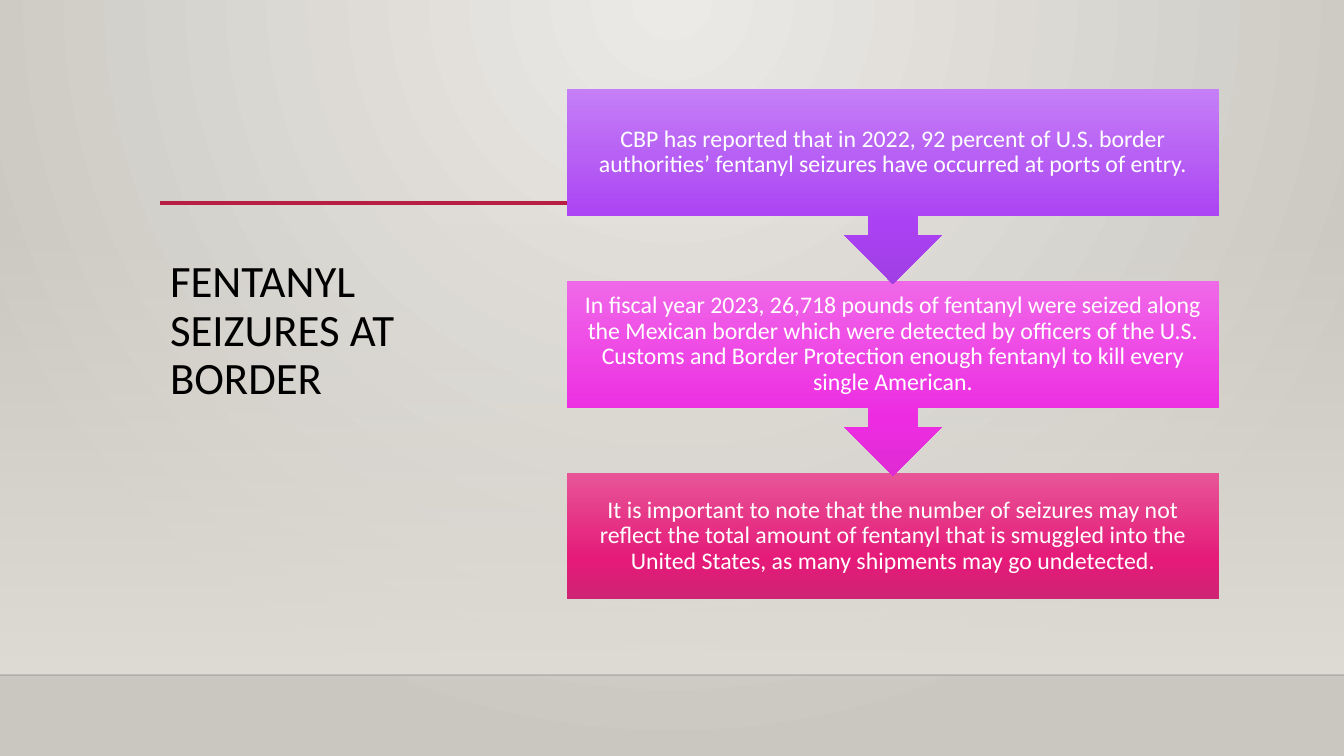
from lxml.etree import SubElement
from pptx import Presentation
from pptx.dml.color import RGBColor
from pptx.enum.shapes import MSO_CONNECTOR, MSO_SHAPE
from pptx.enum.text import MSO_ANCHOR, PP_ALIGN
from pptx.oxml.ns import qn
from pptx.util import Emu, Pt

EMU_PER_PX = 914400 / 100.8
WIDTH, HEIGHT = 1344, 756

BLACK = RGBColor(0x00, 0x00, 0x00)
WHITE = RGBColor(0xFF, 0xFF, 0xFF)
CRIMSON = RGBColor(0xB7, 0x1E, 0x42)
PALE = RGBColor(0xEC, 0xEA, 0xE7)
STONE = RGBColor(0xCA, 0xC7, 0xC1)
SAND = RGBColor(0xDF, 0xDB, 0xD5)
PURPLES = (RGBColor(0xC5, 0x7F, 0xF7), RGBColor(0xAA, 0x41, 0xF3), RGBColor(0xA1, 0x3F, 0xE5))
MAGENTAS = (RGBColor(0xF0, 0x68, 0xE8), RGBColor(0xED, 0x2C, 0xE2), RGBColor(0xE0, 0x2B, 0xD5))
PINKS = (RGBColor(0xE7, 0x55, 0x97), RGBColor(0xE5, 0x1A, 0x79), RGBColor(0xCF, 0x23, 0x74))

STEP_LEFT, STEP_TOP, STEP_WIDTH = 567, 89, 652
STEP_PITCH, BOX_HEIGHT, CALLOUT_HEIGHT = 192, 126, 195
STEPS = [
    ("CBP has reported that in 2022, 92 percent of U.S. border authorities’ fentanyl "
     "seizures have occurred at ports of entry.", PURPLES),
    ("In fiscal year 2023, 26,718 pounds of fentanyl were seized along the Mexican border "
     "which were detected by officers of the U.S. Customs and Border Protection enough "
     "fentanyl to kill every single American.", MAGENTAS),
    ("It is important to note that the number of seizures may not reflect the total amount "
     "of fentanyl that is smuggled into the United States, as many shipments may go "
     "undetected.", PINKS),
]


def px(n):
    return Emu(round(n * EMU_PER_PX))


def set_alpha(color_parent, percent):
    SubElement(color_parent.find(qn("a:srgbClr")), qn("a:alpha"), val=str(percent * 1000))


def set_gradient(fill, element, stops, radial=False):
    """Replace the fill with (position, colour, opacity) stops, running down or out from the top."""
    fill.gradient()
    grad = next(element.iter(qn("a:gradFill")))
    for child in list(grad):
        grad.remove(child)
    gs_list = SubElement(grad, qn("a:gsLst"))
    for position, color, opacity in stops:
        gs = SubElement(gs_list, qn("a:gs"), pos=str(position * 1000))
        SubElement(gs, qn("a:srgbClr"), val=str(color))
        if opacity < 100:
            set_alpha(gs, opacity)
    if radial:
        path = SubElement(grad, qn("a:path"), path="circle")
        SubElement(path, qn("a:fillToRect"), l="43000", t="0", r="43000", b="100000")
    else:
        SubElement(grad, qn("a:lin"), ang="5400000", scaled="0")


def write(sp, text, size, color, align=PP_ALIGN.LEFT, anchor=MSO_ANCHOR.TOP, inset=(10, 5)):
    tf = sp.text_frame
    tf.word_wrap = True
    tf.vertical_anchor = anchor
    tf.margin_left = tf.margin_right = px(inset[0])
    tf.margin_top = tf.margin_bottom = px(inset[1])
    p = tf.paragraphs[0]
    p.alignment = align
    p.line_spacing = 0.9
    r = p.add_run()
    r.text = text
    r.font.name = "Calibri"
    r.font.size = Pt(size)
    r.font.color.rgb = color


class Deck:
    def __init__(self):
        self.prs = Presentation()
        self.prs.slide_width, self.prs.slide_height = px(WIDTH), px(HEIGHT)
        self.slide = self.prs.slides.add_slide(self.prs.slide_layouts[6])

    def background(self, stops):
        set_gradient(self.slide.background.fill, self.slide._element, stops, radial=True)

    def shape(self, kind, x, y, w, h, stops):
        sp = self.slide.shapes.add_shape(kind, px(x), px(y), px(w), px(h))
        sp.shadow.inherit = False
        sp.line.fill.background()
        set_gradient(sp.fill, sp._element, stops)
        return sp

    def rule(self, x1, x2, y, color, width, opacity=100):
        line = self.slide.shapes.add_connector(
            MSO_CONNECTOR.STRAIGHT, px(x1), px(y), px(x2), px(y))
        line.line.color.rgb = color
        line.line.width = Pt(width)
        if opacity < 100:
            set_alpha(next(line._element.iter(qn("a:solidFill"))), opacity)
        SubElement(line._element.spPr, qn("a:effectLst"))

    def title(self, x, y, w, h, text):
        write(self.slide.shapes.add_textbox(px(x), px(y), px(w), px(h)), text, 32, BLACK)

    def step(self, index, text, colors, last):
        """Draw one box of the chain; all but the last end in a down arrow."""
        kind = MSO_SHAPE.RECTANGLE if last else MSO_SHAPE.DOWN_ARROW_CALLOUT
        height = BOX_HEIGHT if last else CALLOUT_HEIGHT
        stops = [(pos, color, 100) for pos, color in zip((0, 69, 100), colors)]
        sp = self.shape(kind, STEP_LEFT, STEP_TOP + index * STEP_PITCH,
                        STEP_WIDTH, height, stops)
        write(sp, text, 17, WHITE, PP_ALIGN.CENTER, MSO_ANCHOR.MIDDLE, inset=(13, 13))


def main():
    deck = Deck()
    deck.background([(0, PALE, 100), (100, STONE, 100)])
    deck.shape(MSO_SHAPE.RECTANGLE, 0, 223, WIDTH, 452, [(0, SAND, 0), (100, SAND, 100)])
    deck.rule(0, WIDTH, 675, BLACK, 1, opacity=20)
    deck.rule(160, 1219, 203, CRIMSON, 2.5)
    deck.title(160, 254, 361, 294, "FENTANYL SEIZURES AT BORDER")
    for i, (text, colors) in reversed(list(enumerate(STEPS))):
        deck.step(i, text, colors, last=i == len(STEPS) - 1)
    deck.prs.save("out.pptx")


if __name__ == "__main__":
    main()
